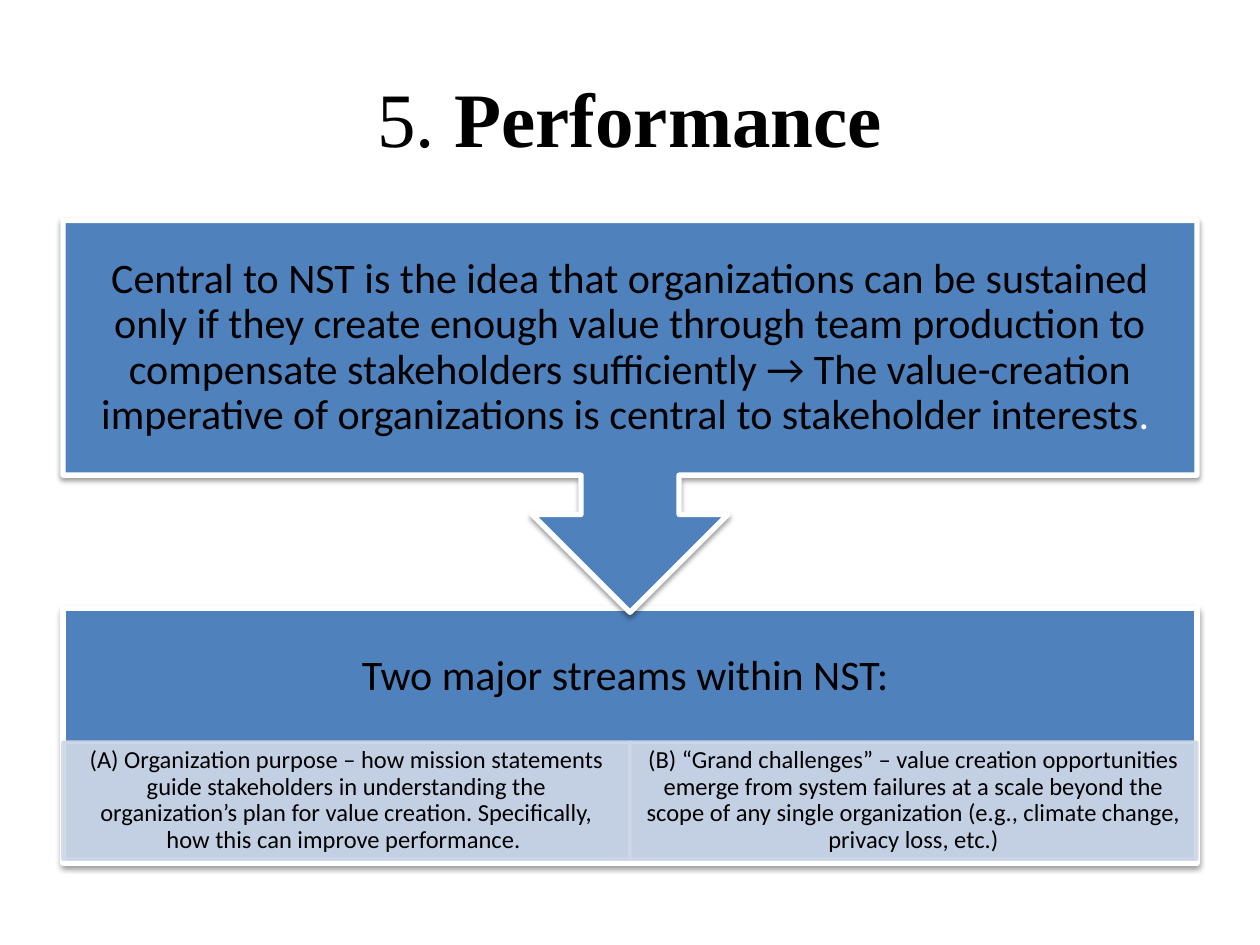
from dataclasses import dataclass

from lxml.etree import SubElement
from pptx import Presentation
from pptx.dml.color import RGBColor
from pptx.enum.shapes import MSO_SHAPE
from pptx.enum.text import MSO_ANCHOR, PP_ALIGN
from pptx.oxml.ns import qn
from pptx.util import Inches, Pt


@dataclass(frozen=True)
class Theme:
    blue: str = "4F81BD"
    pale: str = "D0D8E8"
    black: str = "000000"
    white: str = "FFFFFF"
    heading_font: str = "Times New Roman"
    body_font: str = "Calibri"
    title_size: int = 44
    body_size: int = 24
    detail_size: int = 14


THEME = Theme()
LEFT, WIDTH = 0.5, 9
CALLOUT_TOP, CALLOUT_HEIGHT = 1.75, 3.11
PANEL_TOP, PANEL_HEIGHT = 4.83, 2.02
STREAM_TOP, STREAM_HEIGHT = 5.89, 0.93

STREAMS = (
    "(A) Organization purpose – how mission statements guide stakeholders in "
    "understanding the organization’s plan for value creation. Specifically, "
    "how this can improve performance. ",
    "(B) “Grand challenges” – value creation opportunities emerge from system "
    "failures at a scale beyond the scope of any single organization (e.g., "
    "climate change, privacy loss, etc.)",
)
CENTRAL_IDEA = (
    "Central to NST is the idea that organizations can be sustained only if they "
    "create enough value through team production to compensate stakeholders "
    "sufficiently → The value-creation imperative of organizations is central to "
    "stakeholder interests"
)


def add_span(para, text, *, size, font=THEME.body_font, color=THEME.black, bold=False):
    span = para.add_run()
    span.text = text
    span.font.size = Pt(size)
    span.font.name = font
    span.font.bold = bold
    span.font.color.rgb = RGBColor.from_string(color)


def center_text(frame, side, vertical):
    """Set up a wrapped, centred frame with the given insets; return its paragraph."""
    frame.word_wrap = True
    frame.vertical_anchor = MSO_ANCHOR.MIDDLE
    frame.margin_left = frame.margin_right = Inches(side)
    frame.margin_top = frame.margin_bottom = Inches(vertical)
    para = frame.paragraphs[0]
    para.alignment = PP_ALIGN.CENTER
    para.line_spacing = 0.9
    return para


def add_block(page, kind, left, top, width, height, *, fill, line, weight):
    block = page.shapes.add_shape(
        kind, Inches(left), Inches(top), Inches(width), Inches(height))
    block.shadow.inherit = False
    block.fill.solid()
    block.fill.fore_color.rgb = RGBColor.from_string(fill)
    block.line.color.rgb = RGBColor.from_string(line)
    block.line.width = Pt(weight)
    return block


def add_soft_shadow(block):
    effects = block._element.spPr.find(qn("a:effectLst"))
    shadow = SubElement(effects, qn("a:outerShdw"), blurRad=str(Pt(3.1)),
                        dist=str(Pt(1.6)), dir="5400000", rotWithShape="0")
    color = SubElement(shadow, qn("a:srgbClr"), val=THEME.black)
    SubElement(color, qn("a:alpha"), val="38000")


def make_translucent(block, percent):
    """Apply one opacity to both the fill and the line."""
    for color in block._element.spPr.iter(qn("a:srgbClr")):
        SubElement(color, qn("a:alpha"), val=str(percent * 1000))


def add_solid_block(page, kind, top, height):
    block = add_block(page, kind, LEFT, top, WIDTH, height,
                      fill=THEME.blue, line=THEME.white, weight=3)
    add_soft_shadow(block)
    return block


def add_caption(page, top, height):
    box = page.shapes.add_textbox(
        Inches(LEFT), Inches(top), Inches(WIDTH), Inches(height))
    return center_text(box.text_frame, 0.19, 0.19)


def add_title(page):
    title = page.shapes.title
    title.left, title.top = Inches(LEFT), Inches(0.3)
    title.width, title.height = Inches(WIDTH), Inches(1.25)
    title.text_frame.vertical_anchor = MSO_ANCHOR.MIDDLE
    para = title.text_frame.paragraphs[0]
    para.alignment = PP_ALIGN.CENTER
    for text, bold in (("5. ", False), ("Performance", True)):
        add_span(para, text, size=THEME.title_size, font=THEME.heading_font, bold=bold)


def add_streams_panel(page):
    add_solid_block(page, MSO_SHAPE.RECTANGLE, PANEL_TOP, PANEL_HEIGHT)
    para = add_caption(page, PANEL_TOP, 1.09)
    add_span(para, "Two major streams within NST: ", size=THEME.body_size)
    width = WIDTH / len(STREAMS)
    for index, text in enumerate(STREAMS):
        stream = add_block(page, MSO_SHAPE.RECTANGLE, LEFT + index * width, STREAM_TOP,
                           width, STREAM_HEIGHT,
                           fill=THEME.pale, line=THEME.pale, weight=2)
        make_translucent(stream, 90)
        add_span(center_text(stream.text_frame, 0.11, 0.02), text, size=THEME.detail_size)


def add_central_idea(page):
    callout = add_solid_block(
        page, MSO_SHAPE.UP_ARROW_CALLOUT, CALLOUT_TOP, CALLOUT_HEIGHT)
    callout.rotation = 180
    para = add_caption(page, CALLOUT_TOP, PANEL_HEIGHT)
    add_span(para, CENTRAL_IDEA, size=THEME.body_size)
    add_span(para, ". ", size=THEME.body_size, color=THEME.white)


def main():
    deck = Presentation()
    deck.slide_width, deck.slide_height = Inches(10), Inches(7.5)
    page = deck.slides.add_slide(deck.slide_layouts.get_by_name("Title Only"))
    add_title(page)
    add_streams_panel(page)
    add_central_idea(page)
    deck.save("out.pptx")


if __name__ == "__main__":
    main()
